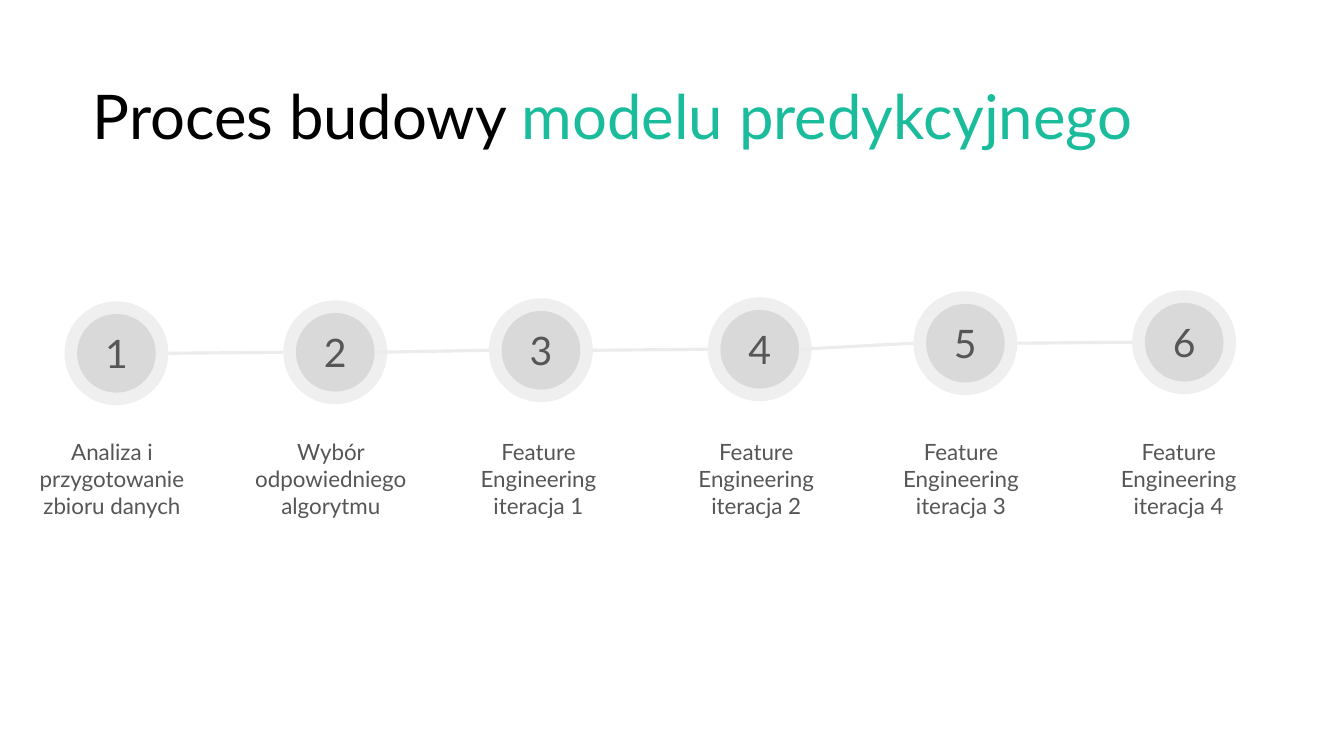
"""Build a slide showing the six steps of building a predictive model."""
from lxml import etree
from pptx import Presentation
from pptx.dml.color import RGBColor
from pptx.enum.shapes import MSO_CONNECTOR, MSO_SHAPE
from pptx.enum.text import MSO_ANCHOR, MSO_AUTO_SIZE, PP_ALIGN
from pptx.oxml.ns import qn
from pptx.util import Inches, Pt

STRAIGHT = MSO_CONNECTOR.STRAIGHT
OVAL = MSO_SHAPE.OVAL
TOP, MIDDLE = MSO_ANCHOR.TOP, MSO_ANCHOR.MIDDLE
LEFT, CENTER = PP_ALIGN.LEFT, PP_ALIGN.CENTER
NO_AUTOFIT = MSO_AUTO_SIZE.NONE

FONT = "Lato"
BLACK, TEAL, DARK_GRAY = "000000", "1ABC9C", "565656"
DISC_GRAY, LINE_GRAY = "D9D9D9", "EDECEC"
RING_OPACITY = 42

TITLE = [("Proces budowy ", BLACK), ("modelu predykcyjnego", TEAL)]
STEPS = [
    ("Analiza i przygotowanie zbioru danych", 0.64, 2.99, 0.35),
    ("Wybór odpowiedniego algorytmu", 2.81, 2.98, 2.52),
    ("Feature Engineering iteracja 1", 4.85, 2.96, 4.58),
    ("Feature Engineering iteracja 2", 7.02, 2.95, 6.74),
    ("Feature Engineering iteracja 3", 9.06, 2.89, 8.77),
    ("Feature Engineering iteracja 4", 11.23, 2.88, 10.93),
]
RING_SIZE, DISC_SIZE = 1.03, 0.78
RING_WIDTH = (RING_SIZE - DISC_SIZE) / 2
LABEL_TOP, LABEL_WIDTH, LABEL_HEIGHT = 4.3, 1.62, 0.91


def color(value):
    return RGBColor.from_string(value)


def write(paragraph, text, size, text_color, alignment):
    paragraph.alignment = alignment
    run = paragraph.add_run()
    run.text = text
    run.font.name = FONT
    run.font.size = Pt(size)
    run.font.color.rgb = color(text_color)


def set_frame(frame):
    frame.word_wrap = True
    frame.auto_size = NO_AUTOFIT
    frame.vertical_anchor = TOP
    frame.margin_left = 0
    frame.margin_right = Inches(0.1)
    frame.margin_top = frame.margin_bottom = Inches(0.05)


def add_title(slide):
    title = slide.shapes.title
    title.left, title.top = Inches(0.92), Inches(0.72)
    title.width, title.height = Inches(11.84), Inches(0.84)
    set_frame(title.text_frame)
    paragraph = title.text_frame.paragraphs[0]
    paragraph.space_before = Pt(6)
    for text, text_color in TITLE:
        write(paragraph, text, 44, text_color, LEFT)


def add_circle(shapes, left, top, size):
    circle = shapes.add_shape(OVAL, Inches(left), Inches(top), Inches(size), Inches(size))
    circle.shadow.inherit = False
    circle.fill.solid()
    circle.fill.fore_color.rgb = color(DISC_GRAY)
    circle.line.fill.background()
    return circle


def add_marker(slide, number, left, top):
    marker = slide.shapes.add_group_shape()
    add_circle(marker.shapes, left + RING_WIDTH, top + RING_WIDTH, DISC_SIZE)
    ring = add_circle(marker.shapes, left, top, RING_SIZE)
    ring_color = next(ring.fill._xPr.iter(qn("a:srgbClr")))
    etree.SubElement(ring_color, qn("a:alpha")).set("val", str(RING_OPACITY * 1000))
    ring.text_frame.vertical_anchor = MIDDLE
    write(ring.text_frame.paragraphs[0], str(number), 28, DARK_GRAY, CENTER)


def add_label(slide, text, left):
    label = slide.shapes.add_textbox(
        Inches(left), Inches(LABEL_TOP), Inches(LABEL_WIDTH), Inches(LABEL_HEIGHT))
    set_frame(label.text_frame)
    write(label.text_frame.paragraphs[0], text, 16, DARK_GRAY, CENTER)


def add_link(slide, start_x, start_y, end_x, end_y):
    link = slide.shapes.add_connector(
        STRAIGHT, Inches(start_x), Inches(start_y), Inches(end_x), Inches(end_y))
    link.line.color.rgb = color(LINE_GRAY)
    link.line.width = Pt(2.25)
    etree.SubElement(link._element.spPr, qn("a:effectLst"))


def main():
    presentation = Presentation()
    presentation.slide_width, presentation.slide_height = Inches(13.33), Inches(7.5)
    slide = presentation.slides.add_slide(presentation.slide_layouts[5])
    add_title(slide)
    for number, (text, left, top, label_left) in enumerate(STEPS, 1):
        add_marker(slide, number, left, top)
        add_label(slide, text, label_left)
    radius = RING_SIZE / 2
    for index, (current, following) in enumerate(zip(STEPS, STEPS[1:])):
        overlap = RING_WIDTH if index % 2 else 0
        add_link(slide, current[1] + RING_SIZE - overlap, current[2] + radius,
                 following[1], following[2] + radius)
    presentation.save("out.pptx")


if __name__ == "__main__":
    main()
